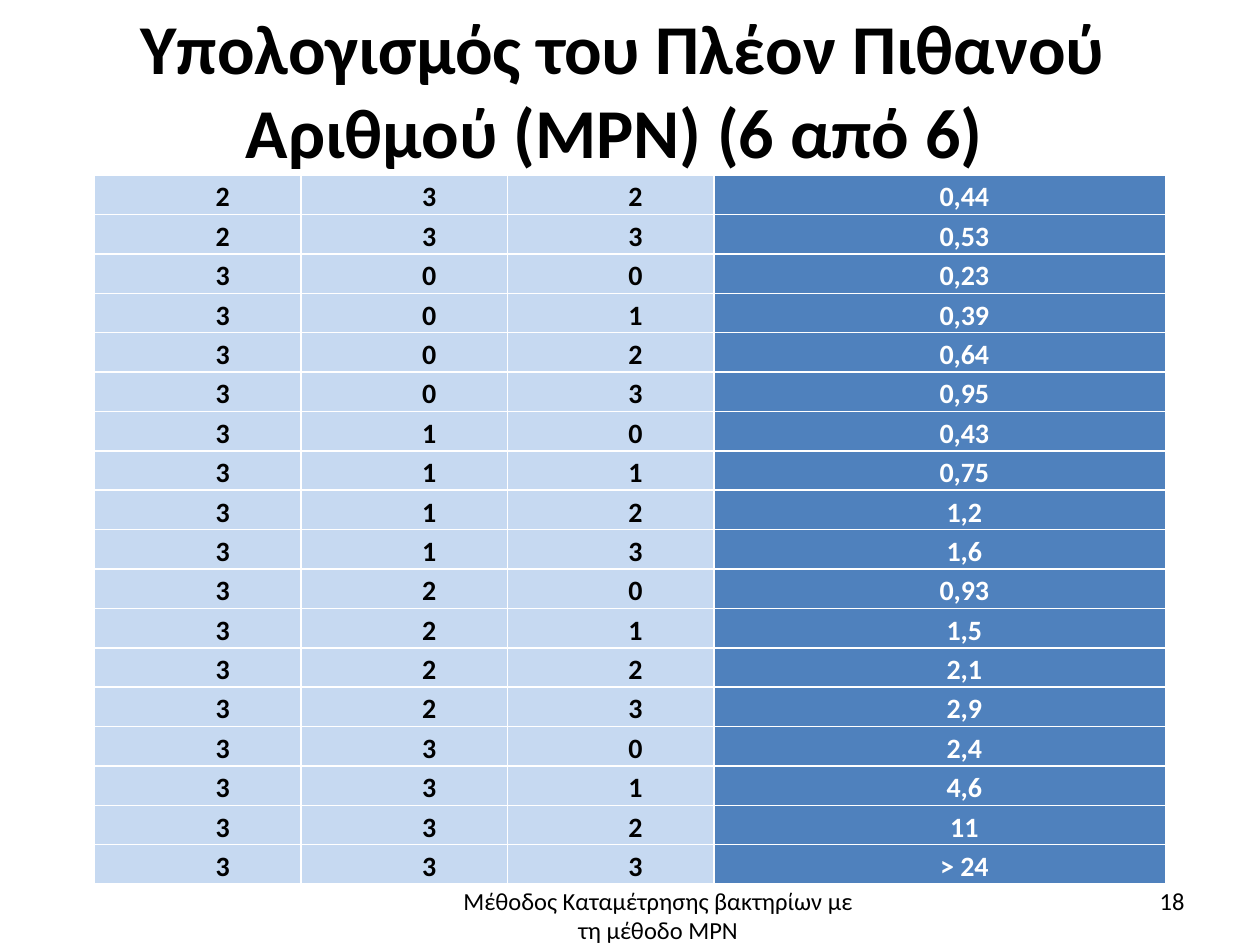
from pptx import Presentation
from pptx.dml.color import RGBColor
from pptx.enum.text import MSO_ANCHOR, MSO_AUTO_SIZE, PP_ALIGN
from pptx.util import Cm, Pt

CENTER, RIGHT = PP_ALIGN.CENTER, PP_ALIGN.RIGHT
TOP, MIDDLE = MSO_ANCHOR.TOP, MSO_ANCHOR.MIDDLE
NO_FIT = MSO_AUTO_SIZE.NONE
BLACK = RGBColor(0x00, 0x00, 0x00)
WHITE = RGBColor(0xFF, 0xFF, 0xFF)
PALE = RGBColor(0xC6, 0xD9, 0xF1)
BLUE = RGBColor(0x4F, 0x81, 0xBD)

ROWS = [
    ("2", "3", "2", "0,44"),
    ("2", "3", "3", "0,53"),
    ("3", "0", "0", "0,23"),
    ("3", "0", "1", "0,39"),
    ("3", "0", "2", "0,64"),
    ("3", "0", "3", "0,95"),
    ("3", "1", "0", "0,43"),
    ("3", "1", "1", "0,75"),
    ("3", "1", "2", "1,2"),
    ("3", "1", "3", "1,6"),
    ("3", "2", "0", "0,93"),
    ("3", "2", "1", "1,5"),
    ("3", "2", "2", "2,1"),
    ("3", "2", "3", "2,9"),
    ("3", "3", "0", "2,4"),
    ("3", "3", "1", "4,6"),
    ("3", "3", "2", "11"),
    ("3", "3", "3", "> 24"),
]


def style(p, size, color, align, bold=False):
    p.alignment = align
    p.font.name = "Calibri"
    p.font.size = Pt(size)
    p.font.bold = bold
    p.font.color.rgb = color


prs = Presentation()
prs.slide_width, prs.slide_height = Cm(25.4), Cm(19.05)
s = prs.slides.add_slide(prs.slide_layouts[5])

title = s.shapes.title
title.left, title.top, title.width, title.height = Cm(0.99), Cm(0.03), Cm(23.11), Cm(3.5)
tf = title.text_frame
tf.text = "Υπολογισμός του Πλέον Πιθανού Αριθμού (MPN) (6 από 6) "
tf.auto_size = NO_FIT
tf.vertical_anchor = MIDDLE
style(tf.paragraphs[0], 40, BLACK, CENTER, True)

table = s.shapes.add_table(len(ROWS), 4, Cm(1.91), Cm(3.53), Cm(21.59), Cm(14.02)).table
table.first_row = table.last_row = True
table.horz_banding = False
for column, width in zip(table.columns, (4.16, 4.16, 4.16, 9.1)):
    column.width = Cm(width)

for i, values in enumerate(ROWS):
    for j, value in enumerate(values):
        is_result = j == 3
        cell = table.cell(i, j)
        cell.margin_top = cell.margin_bottom = 0
        cell.fill.solid()
        cell.fill.fore_color.rgb = BLUE if is_result else PALE
        cell.text = value
        p = cell.text_frame.paragraphs[0]
        style(p, 16, WHITE if is_result else BLACK, CENTER, True)
        p.line_spacing = 1.15
        p._p.get_or_add_pPr().set("indent", str(Cm(1)))

for text, left, top, width, height, align, anchor in (
    ("Μέθοδος Καταμέτρησης βακτηρίων με τη μέθοδο ΜΡΝ", 8.84, 17.73, 8.86, 1.4, CENTER, TOP),
    ("18", 18.21, 17.65, 5.92, 1.02, RIGHT, MIDDLE),
):
    sp = s.shapes.add_textbox(Cm(left), Cm(top), Cm(width), Cm(height))
    tf = sp.text_frame
    tf.word_wrap = True
    tf.vertical_anchor = anchor
    tf.text = text
    style(tf.paragraphs[0], 14, BLACK, align)

prs.save("out.pptx")
